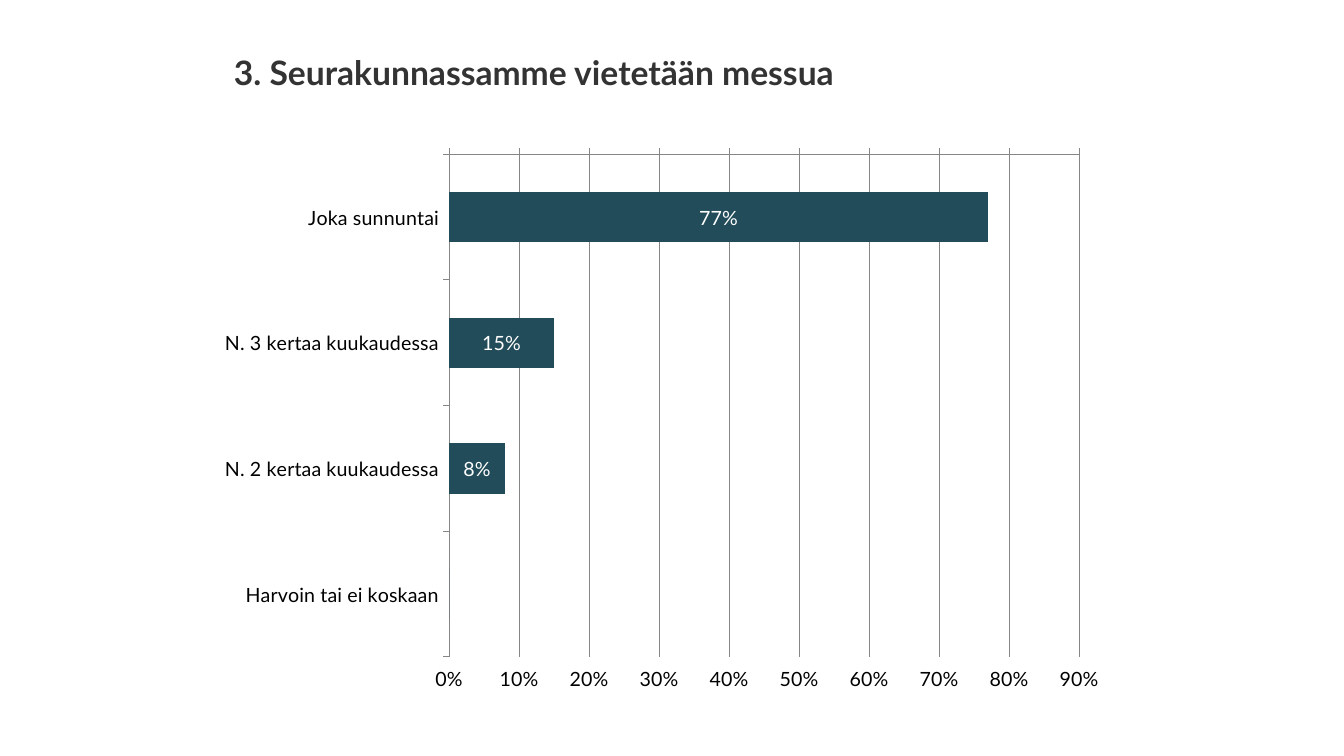
"""Build a slide with a bar chart on how often mass is celebrated."""
from lxml import etree
from pptx import Presentation
from pptx.chart.data import CategoryChartData
from pptx.dml.color import RGBColor
from pptx.enum.chart import XL_CHART_TYPE, XL_LABEL_POSITION, XL_TICK_LABEL_POSITION, XL_TICK_MARK
from pptx.enum.text import MSO_ANCHOR, PP_ALIGN
from pptx.oxml.ns import qn
from pptx.util import Inches, Pt

BAR_CHART = XL_CHART_TYPE.BAR_CLUSTERED
LABEL_CENTER = XL_LABEL_POSITION.CENTER
LABELS_LOW = XL_TICK_LABEL_POSITION.LOW
LABELS_HIGH = XL_TICK_LABEL_POSITION.HIGH
TICK_OUT = XL_TICK_MARK.OUTSIDE
TICK_NONE = XL_TICK_MARK.NONE
MIDDLE = MSO_ANCHOR.MIDDLE
LEFT = PP_ALIGN.LEFT

FONT = "Lato"
TITLE_GRAY = RGBColor(0x33, 0x33, 0x33)
BAR_TEAL = RGBColor(0x23, 0x4C, 0x5A)
GRID_GRAY = RGBColor(0x86, 0x86, 0x86)
BLACK = RGBColor(0, 0, 0)
WHITE = RGBColor(0xFF, 0xFF, 0xFF)

SHARES = {
    "Joka sunnuntai": 0.77,
    "N. 3 kertaa kuukaudessa": 0.15,
    "N. 2 kertaa kuukaudessa": 0.08,
    "Harvoin tai ei koskaan": 0,
}
PLOT_LAYOUT = {
    "layoutTarget": "inner", "xMode": "edge", "yMode": "edge",
    "x": 0.263, "y": 0.02, "w": 0.692, "h": 0.897,
}


def set_attributes(target, values):
    """Set each named attribute on the target."""
    for name, value in values.items():
        setattr(target, name, value)


def format_font(font, size, color, bold=False):
    """Give a font its typeface, size, weight and colour."""
    set_attributes(font, {"name": FONT, "size": Pt(size), "bold": bold})
    font.color.rgb = color


def add_title(slide, text):
    """Place and format the slide title."""
    title = slide.shapes.title
    set_attributes(title, {
        "left": Inches(2.22), "top": Inches(0.46),
        "width": Inches(8.91), "height": Inches(0.5),
    })
    frame = title.text_frame
    set_attributes(frame, {"text": text, "word_wrap": True, "vertical_anchor": MIDDLE})
    heading = frame.paragraphs[0]
    heading.alignment = LEFT
    format_font(heading.runs[0].font, 24, TITLE_GRAY, bold=True)


def fix_plot_area(chart):
    """Fix the inner plot area as fractions of the chart frame."""
    plot_area = chart.plots[0]._element.getparent()
    for layout in plot_area.findall(qn("c:layout")):
        plot_area.remove(layout)
    layout = etree.Element(qn("c:layout"))
    manual = etree.SubElement(layout, qn("c:manualLayout"))
    for tag, value in PLOT_LAYOUT.items():
        etree.SubElement(manual, qn(f"c:{tag}")).set("val", str(value))
    plot_area.insert(0, layout)


def format_line(line):
    """Draw a thin grey chart line."""
    line.color.rgb = GRID_GRAY
    line.width = Pt(0.75)


def format_axes(chart):
    """List categories downwards and keep percentages at the bottom."""
    categories, percentages = chart.category_axis, chart.value_axis
    set_attributes(categories, {"reverse_order": True, "tick_label_position": LABELS_LOW})
    set_attributes(percentages, {
        "minimum_scale": 0, "maximum_scale": 0.9, "major_unit": 0.1,
        "has_major_gridlines": True, "tick_label_position": LABELS_HIGH,
    })
    set_attributes(percentages.tick_labels, {"number_format": "0%", "number_format_is_linked": False})
    format_line(percentages.major_gridlines.format.line)
    for axis in (categories, percentages):
        set_attributes(axis, {"major_tick_mark": TICK_OUT, "minor_tick_mark": TICK_NONE})
        format_line(axis.format.line)
        format_font(axis.tick_labels.font, 14, BLACK)


def format_bars(plot):
    """Colour the bars and label those above zero."""
    set_attributes(plot, {"gap_width": 150, "vary_by_categories": False, "has_data_labels": True})
    fill = plot.series[0].format.fill
    fill.solid()
    fill.fore_color.rgb = BAR_TEAL
    labels = plot.data_labels
    set_attributes(labels, {
        "show_value": True, "number_format": "0%;;",
        "number_format_is_linked": False, "position": LABEL_CENTER,
    })
    format_font(labels.font, 14, WHITE)


def add_share_chart(slide):
    """Add the bar chart of answer shares."""
    data = CategoryChartData(number_format="0%")
    data.categories = list(SHARES)
    data.add_series("Series 1", list(SHARES.values()))
    chart = slide.shapes.add_chart(
        BAR_CHART, Inches(2.08), Inches(1.42), Inches(9.03), Inches(5.56), data
    ).chart
    set_attributes(chart, {"has_title": False, "has_legend": False})
    format_font(chart.font, 14, BLACK)
    fix_plot_area(chart)
    format_axes(chart)
    format_bars(chart.plots[0])


def main():
    """Build and save the slide."""
    deck = Presentation()
    set_attributes(deck, {"slide_width": Inches(13.33), "slide_height": Inches(7.5)})
    slide = deck.slides.add_slide(deck.slide_layouts[5])
    add_title(slide, "3. Seurakunnassamme vietetään messua")
    add_share_chart(slide)
    deck.save("out.pptx")


if __name__ == "__main__":
    main()
